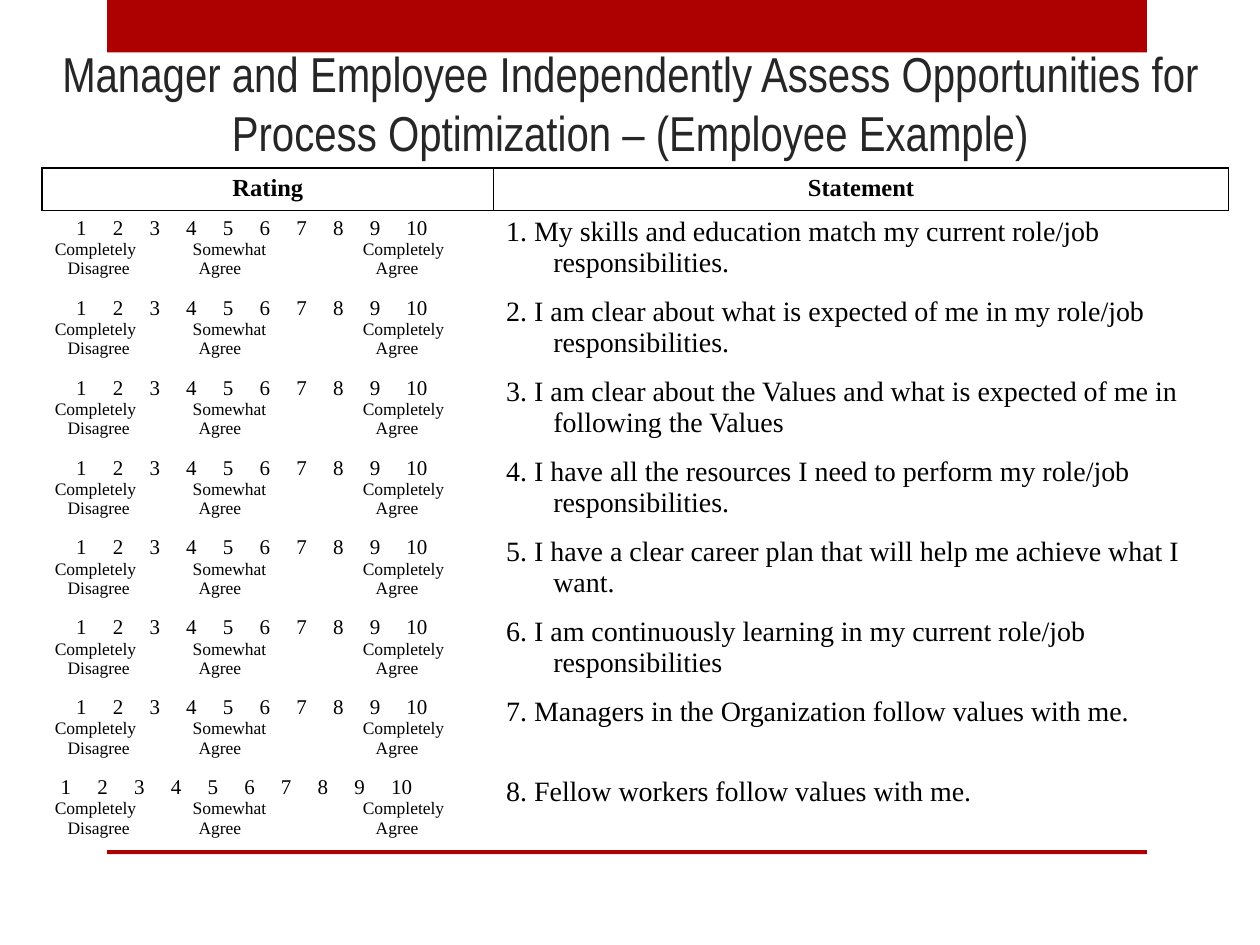
from lxml.etree import SubElement as Sub
from pptx import Presentation
from pptx.dml.color import RGBColor as RGB
from pptx.enum.shapes import MSO_SHAPE as Kind
from pptx.enum.text import MSO_ANCHOR as Anchor, PP_ALIGN as Align
from pptx.oxml.ns import qn
from pptx.util import Cm, Pt

TITLE = ("Manager and Employee Independently Assess Opportunities for "
         "Process Optimization – (Employee Example)")
HEADS = ["Rating", "Statement"]
ITEMS = [
    "My skills and education match my current role/job responsibilities.",
    "I am clear about what is expected of me in my role/job responsibilities.",
    "I am clear about the Values and what is expected of me in following the Values",
    "I have all the resources I need to perform my role/job responsibilities.",
    "I have a clear career plan that will help me achieve what I want.",
    "I am continuously learning in my current role/job responsibilities",
    "Managers in the Organization follow values with me.",
    "Fellow workers follow values with me.",
]
SCALE = [str(n) for n in range(1, 11)]
# Words under the scale, with their offsets in cm
LABELS = [
    (["Completely", "Somewhat", "Completely"], [0, 2.78, 6.21]),
    (["Disagree", "Agree", "Agree"], [0.26, 2.9, 6.47]),
]
START, LAST_START, STEP = 0.43, 0.12, 0.74
COLS = [9.1, 14.82]
HEAD_H, ROW_H = 0.85, 1.58
BARS = [(0, 1.06), (17.14, 0.08)]
SERIF = {"name": "Times New Roman", "bold": False}


def color(code):
    return RGB.from_string(code)


def write(par, text, ink="000000", **form):
    run = par.add_run()
    run.text = text
    run.font.color.rgb = color(ink)
    for key, value in form.items():
        setattr(run.font, key, value)


def spread(par, words, stops, size):
    """Place each word at its own tab stop."""
    props = par._p.get_or_add_pPr()
    tabs = Sub(props, qn("a:tabLst"))
    for stop in stops:
        if stop:
            Sub(tabs, qn("a:tab"), pos=str(Cm(stop)), algn="l")
    lead = "\t" if stops[0] else ""
    write(par, lead + "\t".join(words), size=Pt(size), **SERIF)


def clear(cell, ruled):
    """Remove the fill and set all four borders of a cell."""
    props = cell._tc.get_or_add_tcPr()
    for side in "LRTB":
        line = Sub(props, qn("a:ln" + side), w=str(Pt(1) if ruled(side) else 0))
        if ruled(side):
            fill = Sub(line, qn("a:solidFill"))
            Sub(fill, qn("a:srgbClr"), val="000000")
        else:
            Sub(line, qn("a:noFill"))
    cell.fill.background()


def rate(cell, start):
    """Fill a cell with the scale and the labels below it."""
    frame = cell.text_frame
    stops = [start + STEP * i for i in range(len(SCALE))]
    spread(frame.paragraphs[0], SCALE, stops, 12)
    for words, stops in LABELS:
        spread(frame.add_paragraph(), words, stops, 10)


def state(cell, text):
    par = cell.text_frame.paragraphs[0]
    props = par._p.get_or_add_pPr()
    props.set("marL", str(Cm(0.95)))
    props.set("indent", str(-Cm(0.95)))
    write(par, text, size=Pt(16), **SERIF)


def main():
    deck = Presentation()
    deck.slide_width, deck.slide_height = Cm(25.4), Cm(19.05)
    slide = deck.slides.add_slide(deck.slide_layouts[6])
    shapes = slide.shapes

    for top, high in BARS:
        bar = shapes.add_shape(Kind.RECTANGLE, Cm(2.16), Cm(top), Cm(20.96), Cm(high))
        bar.shadow.inherit = False
        bar.fill.solid()
        bar.fill.fore_color.rgb = color("AD0101")
        bar.line.fill.background()

    frame = shapes.add_textbox(0, Cm(0.2), Cm(25.4), Cm(3.18)).text_frame
    frame.word_wrap = True
    frame.vertical_anchor = Anchor.BOTTOM
    par = frame.paragraphs[0]
    par.alignment = Align.CENTER
    write(par, TITLE, "262626", name="Arial Narrow", size=Pt(28))

    count = len(ITEMS)
    table = shapes.add_table(count + 1, len(COLS), Cm(0.85), Cm(3.39), Cm(sum(COLS)),
                             Cm(HEAD_H + ROW_H * count)).table
    table.first_row = table.horz_banding = False
    for col, wide in zip(table.columns, COLS):
        col.width = Cm(wide)
    for i, row in enumerate(table.rows):
        row.height = Cm(ROW_H if i else HEAD_H)
        for cell in row.cells:
            clear(cell, lambda side: i == 0 or (i == 1 and side == "T"))

    for i, head in enumerate(HEADS):
        par = table.cell(0, i).text_frame.paragraphs[0]
        par.alignment = Align.CENTER
        write(par, head, **{**SERIF, "bold": True, "size": Pt(14)})
    for n, item in enumerate(ITEMS, 1):
        rate(table.cell(n, 0), LAST_START if n == count else START)
        state(table.cell(n, 1), f"{n}. {item}")

    deck.save("out.pptx")


if __name__ == "__main__":
    main()
